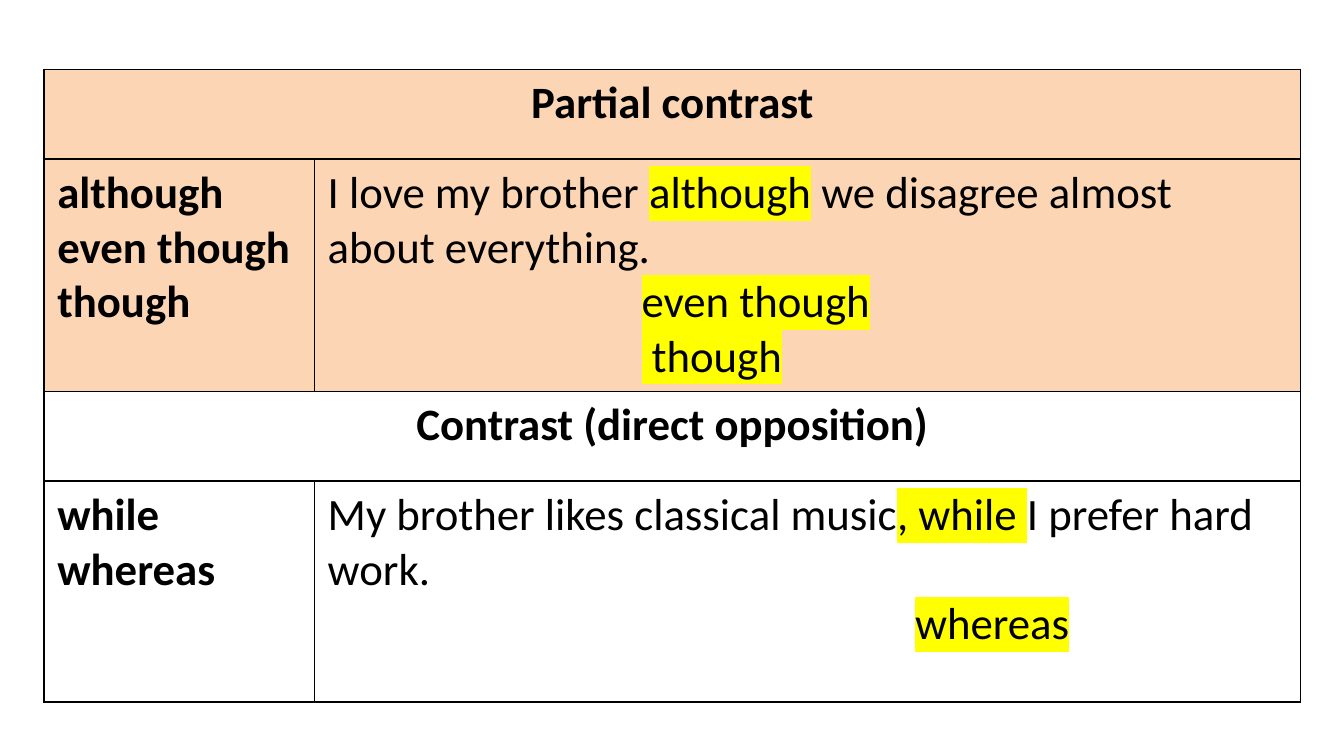
from dataclasses import dataclass

from lxml.etree import SubElement
from pptx import Presentation
from pptx.dml.color import RGBColor
from pptx.enum.text import PP_ALIGN
from pptx.oxml import parse_xml
from pptx.oxml.ns import nsdecls, qn
from pptx.util import Cm, Pt

COLOURS = {"ink": "000000", "peach": "FCD5B5", "marker": "FFFF00"}
COLUMN_WIDTHS = (5.11, 18.64)
HEADING_HEIGHT = 1.7
EXAMPLE_HEIGHT = 4.17


@dataclass(frozen=True)
class Phrase:
    text: str
    marked: bool = False


@dataclass(frozen=True)
class Line:
    phrases: tuple[Phrase, ...]
    indent: float = 0


@dataclass(frozen=True)
class Contrast:
    heading: str
    linkers: tuple[str, ...]
    examples: tuple[Line, ...]
    fill: str | None = None


CONTRASTS = (
    Contrast(
        "Partial contrast",
        ("although", "even though", "though"),
        (
            Line((Phrase("I love my brother "), Phrase("although", True),
                  Phrase(" we disagree almost about everything."))),
            Line((Phrase("even though", True),), 5.93),
            Line((Phrase(" though", True),), 5.93),
        ),
        "peach",
    ),
    Contrast(
        "Contrast (direct opposition)",
        ("while", "whereas"),
        (
            Line((Phrase("My brother likes classical music"), Phrase(", while ", True),
                  Phrase("I prefer hard work."))),
            Line((Phrase("whereas", True),), 11.1),
        ),
    ),
)


def add_text(paragraph, text: str, *, bold: bool = False, marked: bool = False) -> None:
    """Append one formatted run to a paragraph."""
    run = paragraph.add_run()
    run.text = text
    run.font.size = Pt(24)
    run.font.name = "Calibri"
    run.font.bold = bold
    run.font.color.rgb = RGBColor.from_string(COLOURS["ink"])
    if marked:
        highlight = parse_xml(
            f'<a:highlight {nsdecls("a")}><a:srgbClr val="{COLOURS["marker"]}"/></a:highlight>'
        )
        run.font._element.find(qn("a:solidFill")).addnext(highlight)


def style_cell(cell, fill: str | None) -> None:
    """Give a cell its fill and thin borders on all sides."""
    properties = cell._tc.get_or_add_tcPr()
    for side in ("lnL", "lnR", "lnT", "lnB"):
        border = SubElement(properties, qn(f"a:{side}"), w=str(Pt(1)))
        SubElement(SubElement(border, qn("a:solidFill")), qn("a:srgbClr"), val=COLOURS["ink"])
    if fill:
        cell.fill.solid()
        cell.fill.fore_color.rgb = RGBColor.from_string(COLOURS[fill])
    else:
        cell.fill.background()


def write_lines(cell, lines: tuple[Line, ...], *, bold: bool = False,
                align: PP_ALIGN = PP_ALIGN.LEFT) -> None:
    """Write lines into a cell, one paragraph each."""
    frame = cell.text_frame
    for index, line in enumerate(lines):
        paragraph = frame.add_paragraph() if index else frame.paragraphs[0]
        paragraph.alignment = align
        if line.indent:
            paragraph._p.get_or_add_pPr().set("marL", str(Cm(line.indent)))
        for phrase in line.phrases:
            add_text(paragraph, phrase.text, bold=bold, marked=phrase.marked)


def fill_contrast(table, top_row: int, contrast: Contrast) -> None:
    """Fill a heading row and the example row below it."""
    for row, height in ((top_row, HEADING_HEIGHT), (top_row + 1, EXAMPLE_HEIGHT)):
        table.rows[row].height = Cm(height)
        for column in range(len(COLUMN_WIDTHS)):
            style_cell(table.cell(row, column), contrast.fill)
    heading = table.cell(top_row, 0)
    heading.merge(table.cell(top_row, 1))
    write_lines(heading, (Line((Phrase(contrast.heading),)),), bold=True, align=PP_ALIGN.CENTER)
    linkers = tuple(Line((Phrase(linker),)) for linker in contrast.linkers)
    write_lines(table.cell(top_row + 1, 0), linkers, bold=True)
    write_lines(table.cell(top_row + 1, 1), contrast.examples)


def main() -> None:
    """Build the slide of contrast linkers and save it."""
    presentation = Presentation()
    presentation.slide_width, presentation.slide_height = Cm(25.4), Cm(14.29)
    slide = presentation.slides.add_slide(presentation.slide_layouts[6])
    height = len(CONTRASTS) * (HEADING_HEIGHT + EXAMPLE_HEIGHT)
    table = slide.shapes.add_table(
        2 * len(CONTRASTS), len(COLUMN_WIDTHS),
        Cm(0.83), Cm(1.31), Cm(sum(COLUMN_WIDTHS)), Cm(height),
    ).table
    table.first_row = table.horz_banding = False
    for column, width in zip(table.columns, COLUMN_WIDTHS):
        column.width = Cm(width)
    for index, contrast in enumerate(CONTRASTS):
        fill_contrast(table, 2 * index, contrast)
    presentation.save("out.pptx")


if __name__ == "__main__":
    main()
